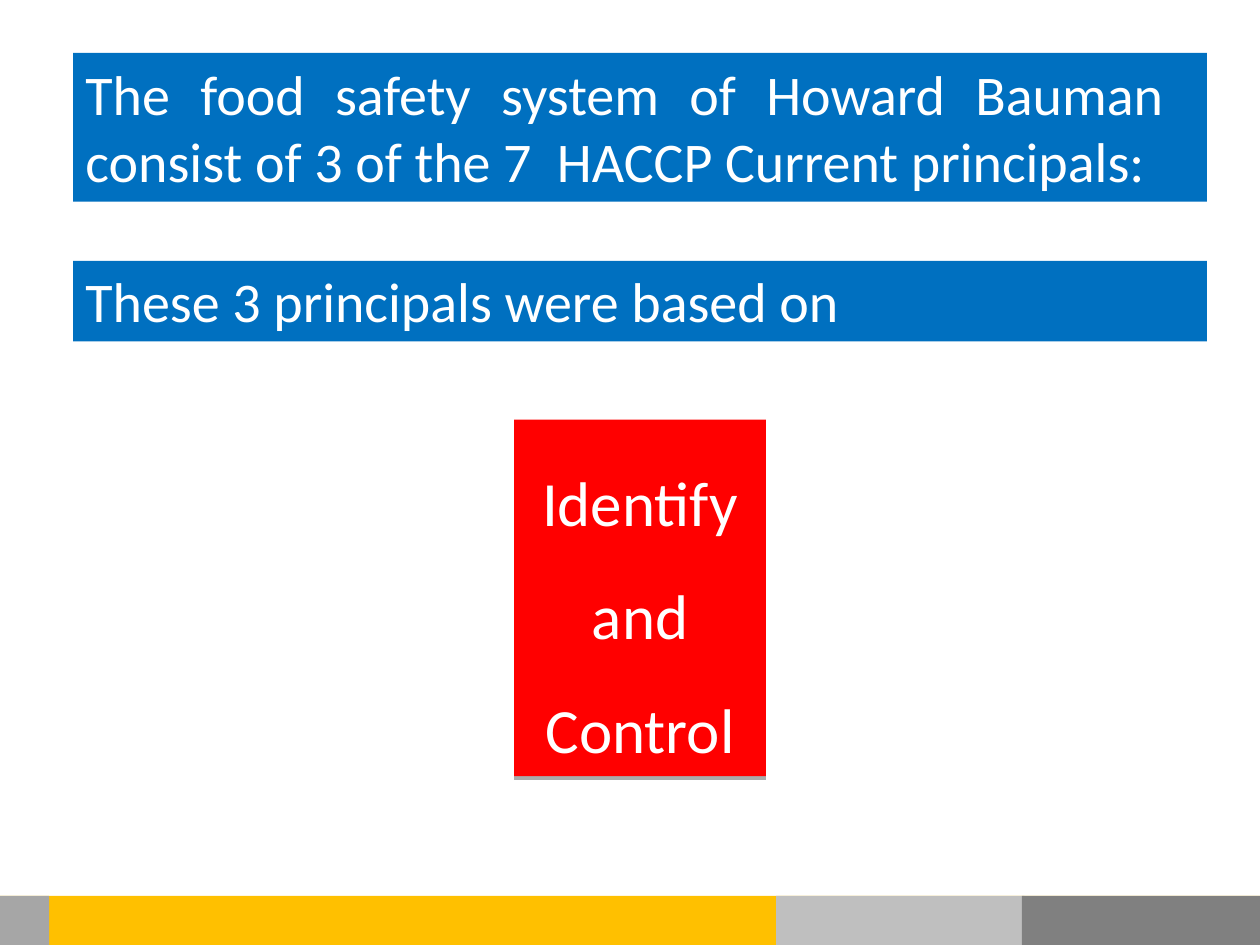
"""Build a slide on the three founding HACCP principles."""
from dataclasses import dataclass

from lxml import etree
from pptx import Presentation
from pptx.dml.color import RGBColor
from pptx.enum.shapes import MSO_SHAPE
from pptx.enum.text import MSO_ANCHOR, MSO_AUTO_SIZE, PP_ALIGN
from pptx.oxml.ns import qn
from pptx.util import Inches, Pt

RECTANGLE = MSO_SHAPE.RECTANGLE
TOP = MSO_ANCHOR.TOP
GROW = MSO_AUTO_SIZE.SHAPE_TO_FIT_TEXT
LEFT, CENTER, JUSTIFY = PP_ALIGN.LEFT, PP_ALIGN.CENTER, PP_ALIGN.JUSTIFY


@dataclass(frozen=True)
class Theme:
    font: str = "Calibri"
    text: str = "FFFFFF"
    banner: str = "0070C0"
    callout: str = "FF0000"
    shadow: str = "000000"
    gold: str = "FFC000"
    silver: str = "BFBFBF"
    slate: str = "808080"
    gray: str = "A6A6A6"
    banner_size: int = 32
    callout_size: int = 36


theme = Theme()
deck = Presentation()
deck.slide_width, deck.slide_height = Inches(10), Inches(7.5)
column, row = deck.slide_width / 100, deck.slide_height / 75
page = deck.slides.add_slide(deck.slide_layouts[6])


def add_box(left, top, width, height, color):
    box = page.shapes.add_shape(
        RECTANGLE, round(left * column), round(top * row), round(width * column), round(height * row)
    )
    box.shadow.inherit = False
    box.fill.solid()
    box.fill.fore_color.rgb = RGBColor.from_string(color)
    box.line.fill.background()
    return box


def write(box, text, size, alignment, spacing=1.0):
    frame = box.text_frame
    frame.word_wrap = True
    frame.auto_size = GROW
    frame.vertical_anchor = TOP
    para = frame.paragraphs[0]
    para.text = text
    para.alignment = alignment
    para.line_spacing = spacing
    para.font.name = theme.font
    para.font.size = Pt(size)
    para.font.color.rgb = RGBColor.from_string(theme.text)


callout = add_box(40.8, 33.3, 20, 28.3, theme.callout)
write(callout, "Identify and Control", theme.callout_size, CENTER, 1.5)
effects = callout.element.spPr.find(qn("a:effectLst"))
shadow = etree.SubElement(
    effects, qn("a:outerShdw"), dist=str(Pt(2.2)), dir="5400000", rotWithShape="0"
)
shade = etree.SubElement(shadow, qn("a:srgbClr"), val=theme.shadow)
etree.SubElement(shade, qn("a:alpha"), val="32000")

banners = [
    (4.2, 11.8, JUSTIFY,
     "The food safety system of Howard Bauman  consist of 3 of the 7  HACCP Current principals:"),
    (20.7, 6.4, LEFT, "These 3 principals were based on"),
]
for top, height, alignment, text in banners:
    banner = add_box(5.8, top, 90, height, theme.banner)
    write(banner, text, theme.banner_size, alignment)

footer_height = 3.9
footer = [
    (0, 100.4, theme.gold),
    (61.6, 19.7, theme.silver),
    (81.1, 19.7, theme.slate),
    (0, footer_height, theme.gray),
]
for left, width, color in footer:
    add_box(left, 75 - footer_height, width, footer_height, color)

deck.save("out.pptx")
